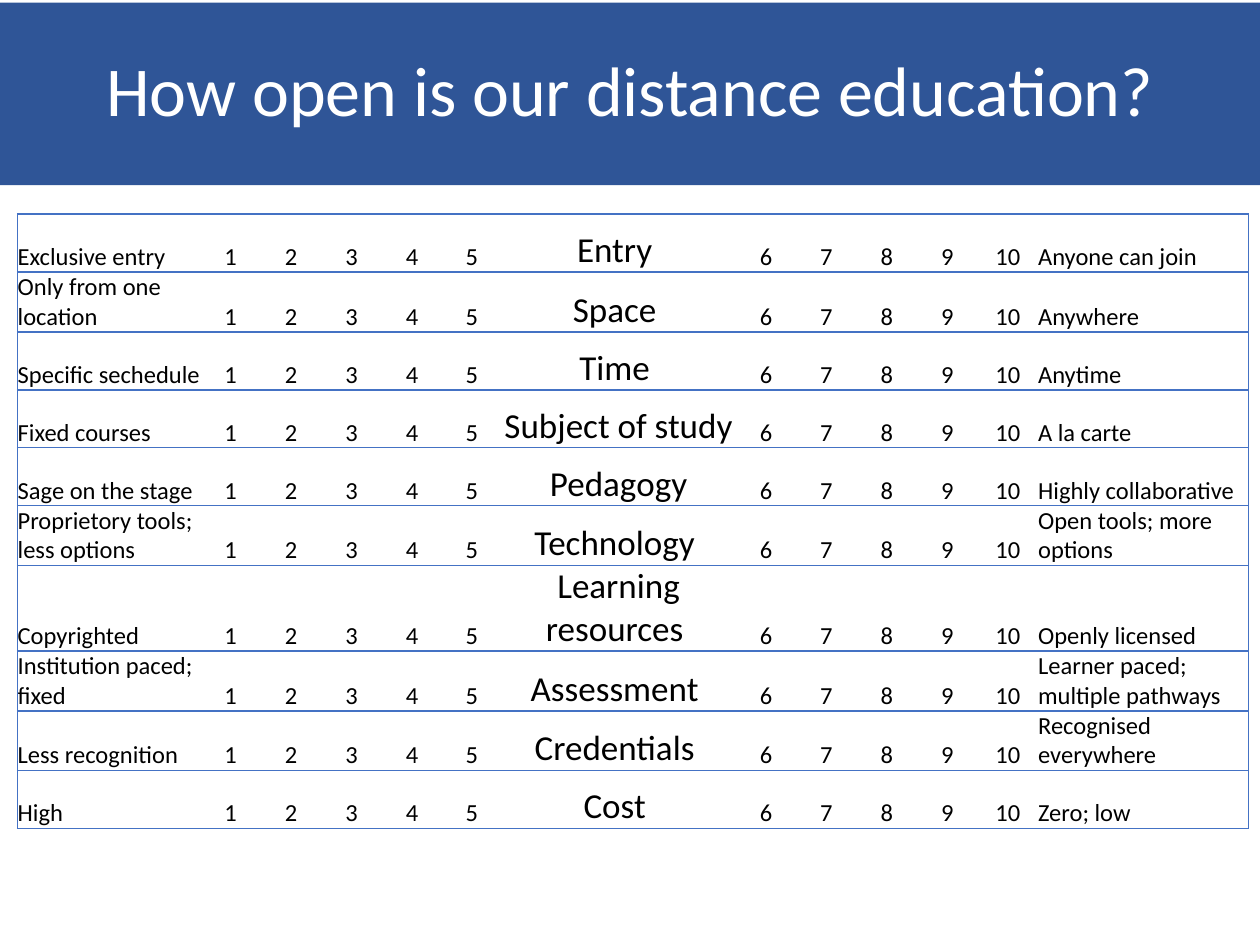
import pptx
import pptx.util
import pptx.oxml
import pptx.oxml.ns
from pptx.dml.color import RGBColor
from pptx.enum.text import MSO_ANCHOR, PP_ALIGN
from pptx.util import Inches

# Content: closed end, dimension, open end
TITLE = "How open is our distance education?"
SCALES = [
    ("Exclusive entry", "Entry ", "Anyone can join"),
    ("Only from one location", "Space ", "Anywhere"),
    ("Specific sechedule", "Time ", "Anytime"),
    ("Fixed courses", "Subject of study ", "A la carte"),
    ("Sage on the stage", "Pedagogy", "Highly collaborative"),
    ("Proprietory tools; less options", "Technology ", "Open tools; more options"),
    ("Copyrighted", "Learning resources ", "Openly licensed"),
    ("Institution paced; fixed", "Assessment ", "Learner paced; multiple pathways"),
    ("Less recognition", "Credentials ", "Recognised everywhere"),
    ("High", "Cost ", "Zero; low"),
]
LOW = [str(n) for n in range(1, 6)]
HIGH = [str(n) for n in range(6, 11)]

# Look
FONT = "Calibri"
BANNER = RGBColor(0x2F, 0x55, 0x97)
RULE = RGBColor(0x44, 0x72, 0xC4)
WHITE = RGBColor(0xFF, 0xFF, 0xFF)
BLACK = RGBColor(0, 0, 0)
NO_STYLE = "{2D5ABB26-0587-4C30-8999-92F81FD0307C}"

COL_WIDTHS = [1.45] + [0.48] * 4 + [0.47, 1.86] + [0.48] * 5 + [1.67]
ROW_HEIGHTS = [0.46, 0.47, 0.46, 0.46, 0.46, 0.47, 0.66, 0.47, 0.47, 0.46]
MIDDLE, LAST = 1 + len(LOW), len(COL_WIDTHS) - 1


def write(tf, text, size=14, color=BLACK, align=PP_ALIGN.LEFT, spacing=None):
    p = tf.paragraphs[0]
    p.alignment = align
    p.line_spacing = spacing
    r = p.add_run()
    r.text = text
    r.font.name = FONT
    r.font.size = pptx.util.Pt(size)
    r.font.color.rgb = color


def add_border(cell, side):
    cell._tc.get_or_add_tcPr().append(pptx.oxml.parse_xml(
        f'<a:ln{side} {pptx.oxml.ns.nsdecls("a")} w="{pptx.util.Pt(1)}">'
        f'<a:solidFill><a:srgbClr val="{RULE}"/></a:solidFill></a:ln{side}>'))


prs = pptx.Presentation()
prs.slide_width, prs.slide_height = Inches(10), Inches(7.5)
s = prs.slides.add_slide(prs.slide_layouts[5])

# Title banner
title = s.shapes.title
title.left, title.top = Inches(0), Inches(0.02)
title.width, title.height = Inches(10), Inches(1.45)
title.fill.solid()
title.fill.fore_color.rgb = BANNER
title.text_frame.vertical_anchor = MSO_ANCHOR.MIDDLE
write(title.text_frame, TITLE, size=40, color=WHITE, align=PP_ALIGN.CENTER, spacing=0.9)

# Rating table
frame = s.shapes.add_table(len(SCALES), len(COL_WIDTHS), Inches(0.14), Inches(1.7),
                           Inches(sum(COL_WIDTHS)), Inches(sum(ROW_HEIGHTS)))
table = frame.table
table.first_row = table.horz_banding = False
table._tbl.tblPr.find(pptx.oxml.ns.qn("a:tableStyleId")).text = NO_STYLE
for column, width in zip(table.columns, COL_WIDTHS):
    column.width = Inches(width)
for row, height in zip(table.rows, ROW_HEIGHTS):
    row.height = Inches(height)

for i, (closed, dimension, opened) in enumerate(SCALES):
    for j, text in enumerate([closed, *LOW, dimension, *HIGH, opened]):
        cell = table.cell(i, j)
        cell.margin_left = cell.margin_right = cell.margin_top = cell.margin_bottom = 0
        cell.vertical_anchor = MSO_ANCHOR.BOTTOM
        write(cell.text_frame, text, size=20 if j == MIDDLE else 14,
              align=PP_ALIGN.LEFT if j in (0, LAST) else PP_ALIGN.CENTER)
        # Outer frame and row rules, no inner verticals
        for side in {0: "LTB", LAST: "RTB"}.get(j, "TB"):
            add_border(cell, side)
        cell.fill.solid()
        cell.fill.fore_color.rgb = WHITE

prs.save("out.pptx")
